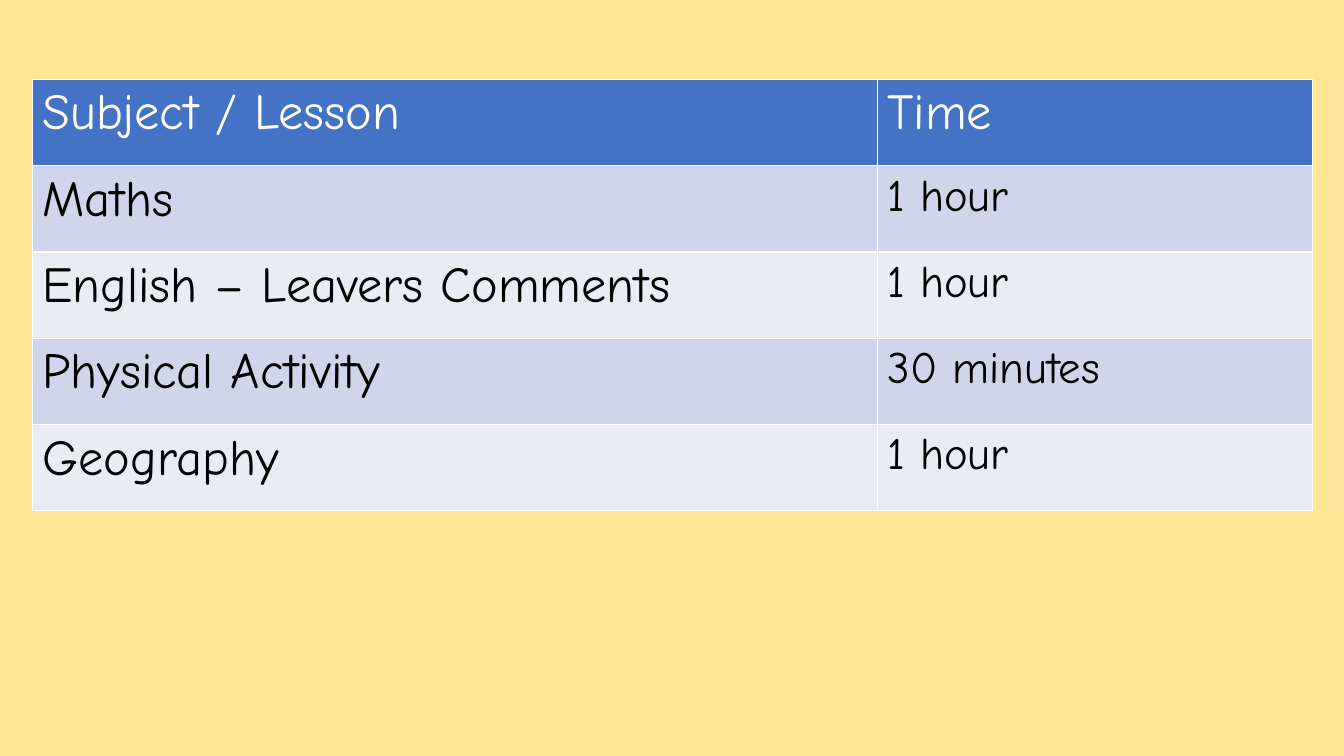
from dataclasses import dataclass

from pptx import Presentation
from pptx.dml.color import RGBColor
from pptx.util import Pt

FONT = "Comic Neue"
COLORS = {
    "background": "FFE699",
    "header": "4472C4",
    "odd_row": "CFD5EA",
    "even_row": "E9EBF5",
    "header_text": "FFFFFF",
    "body_text": "000000",
}
BLANK_LAYOUT = 6
COLUMN_WIDTHS = (603.6, 310.7)
ROW_HEIGHT = 61.65
TABLE_LEFT = 23.2
TABLE_TOP = 56.8
LARGE = 36
SMALL = 32


@dataclass(frozen=True)
class Lesson:
    subject: str
    time: str


HEADINGS = Lesson("Subject / Lesson", "Time")
LESSONS = (
    Lesson("Maths", "1 hour"),
    Lesson("English – Leavers Comments", "1 hour"),
    Lesson("Physical Activity", "30 minutes"),
    Lesson("Geography", "1 hour"),
)


def color(name: str) -> RGBColor:
    return RGBColor.from_string(COLORS[name])


def fill_cell(cell, text: str, size: float, fill: str, text_color: str) -> None:
    cell.fill.solid()
    cell.fill.fore_color.rgb = color(fill)
    cell.text = text
    font = cell.text_frame.paragraphs[0].font
    font.name = FONT
    font.size = Pt(size)
    font.bold = False
    font.color.rgb = color(text_color)


def add_timetable(slide) -> None:
    row_count = len(LESSONS) + 1
    timetable = slide.shapes.add_table(
        row_count, len(COLUMN_WIDTHS), Pt(TABLE_LEFT), Pt(TABLE_TOP),
        Pt(sum(COLUMN_WIDTHS)), Pt(ROW_HEIGHT * row_count),
    ).table
    for column, width in zip(timetable.columns, COLUMN_WIDTHS):
        column.width = Pt(width)
    for row in timetable.rows:
        row.height = Pt(ROW_HEIGHT)

    fill_cell(timetable.cell(0, 0), HEADINGS.subject, LARGE, "header", "header_text")
    fill_cell(timetable.cell(0, 1), HEADINGS.time, LARGE, "header", "header_text")
    for index, lesson in enumerate(LESSONS, start=1):
        band = "odd_row" if index % 2 else "even_row"
        fill_cell(timetable.cell(index, 0), lesson.subject, LARGE, band, "body_text")
        fill_cell(timetable.cell(index, 1), lesson.time, SMALL, band, "body_text")


def main() -> None:
    presentation = Presentation()
    presentation.slide_width = Pt(960)
    presentation.slide_height = Pt(540)
    slide = presentation.slides.add_slide(presentation.slide_layouts[BLANK_LAYOUT])
    slide.background.fill.solid()
    slide.background.fill.fore_color.rgb = color("background")
    add_timetable(slide)
    presentation.save("out.pptx")


if __name__ == "__main__":
    main()
